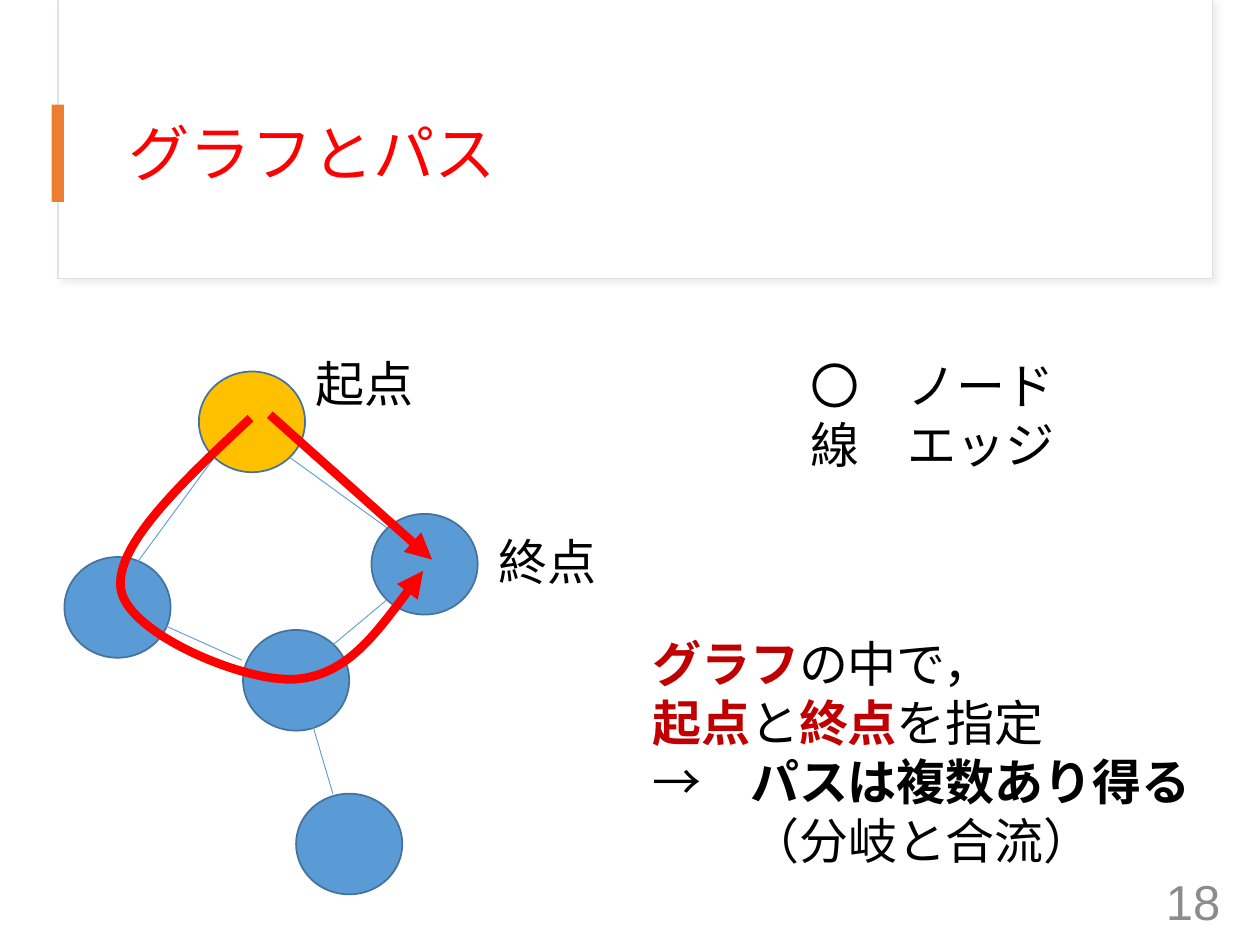
from dataclasses import dataclass
from typing import NamedTuple

from lxml.etree import SubElement
from pptx import Presentation
from pptx.dml.color import RGBColor
from pptx.enum.shapes import MSO_CONNECTOR, MSO_SHAPE
from pptx.enum.text import MSO_ANCHOR, PP_ALIGN
from pptx.oxml import parse_xml
from pptx.oxml.ns import nsdecls, qn
from pptx.util import Cm, Pt


@dataclass(frozen=True)
class Theme:
    latin: str = "Arial"
    kanji: str = "Noto Sans CJK JP"
    white: str = "FFFFFF"
    black: str = "000000"
    red: str = "FF0000"
    key: str = "C00000"
    gray: str = "8C8C8C"
    border: str = "E1E1E1"
    shade: str = "D9D9D9"
    accent: str = "ED7D31"
    start: str = "FFC000"
    node: str = "5B9BD5"
    rim: str = "43739E"
    head: float = 35
    body: float = 28


class Box(NamedTuple):
    x: float
    y: float
    w: float
    h: float

    def cm(self) -> list:
        return [Cm(v) for v in self]


class Edge(NamedTuple):
    x1: float
    y1: float
    x2: float
    y2: float


class Node(NamedTuple):
    x: float
    y: float
    color: str


class Span(NamedTuple):
    text: str
    color: str
    bold: bool = False


T = Theme()
NODE_W, NODE_H = 2.14, 2.03

NODES = [
    Node(4.01, 7.49, T.start),
    Node(1.3, 11.23, T.node),
    Node(7.49, 10.36, T.node),
    Node(4.9, 12.7, T.node),
    Node(5.97, 16, T.node),
]
EDGES = [
    Edge(4.32, 9.22, 2.72, 11.4),
    Edge(5.84, 9.22, 7.8, 10.64),
    Edge(4.88, 13.31, 3.12, 12.52),
    Edge(7.8, 12.09, 6.71, 13),
    Edge(6.71, 16, 6.3, 14.61),
]
# Start point, then three points for each Bézier piece
CURVE = [
    (5.05, 8.43),
    (3.66, 9.73), (2.29, 11.02), (2.44, 11.89),
    (2.59, 12.78), (4.95, 13.77), (5.97, 13.69),
    (6.99, 13.61), (7.75, 12.55), (8.53, 11.51),
]
DIRECT = Edge(5.44, 8.36, 8.71, 11.28)

LABELS = [
    (Box(6.12, 7.01, 2.51, 1.45), ["起点"]),
    (Box(9.8, 10.59, 2.51, 1.45), ["終点"]),
    (Box(16.08, 7.04, 5.51, 2.64), ["〇　ノード", "線　エッジ"]),
]
NOTE = [
    [Span("グラフ", T.key, True), Span("の中で，", T.black)],
    [Span("起点", T.key, True), Span("と", T.black),
     Span("終点", T.key, True), Span("を指定", T.black)],
    [Span("→　", T.black), Span("パスは複数あり得る", T.black, True)],
    [Span("（分岐と合流）", T.black)],
]


def style(run, size: float, color: str, font: str, bold: bool = False) -> None:
    run.font.size, run.font.bold = Pt(size), bold
    run.font.color.rgb = RGBColor.from_string(color)
    run.font.name = font
    SubElement(run.font._element, qn("a:ea"), typeface=T.kanji)


def stroke(line, color: str, width: float, arrow: bool = False) -> None:
    line.color.rgb = RGBColor.from_string(color)
    line.width = Pt(width)
    if arrow:
        SubElement(line._get_or_add_ln(), qn("a:tailEnd"), type="triangle")


def add_form(slide, kind: MSO_SHAPE, box: Box, fill: str,
             rim: str = "", width: float = 1):
    shape = slide.shapes.add_shape(kind, *box.cm())
    shape.shadow.inherit = False
    shape.fill.solid()
    shape.fill.fore_color.rgb = RGBColor.from_string(fill)
    if rim:
        stroke(shape.line, rim, width)
    else:
        shape.line.fill.background()
    return shape


def add_line(slide, edge: Edge, color: str, width: float,
             arrow: bool = False) -> None:
    line = slide.shapes.add_connector(MSO_CONNECTOR.STRAIGHT,
                                      *[Cm(v) for v in edge])
    stroke(line.line, color, width, arrow)
    SubElement(line._element.spPr, qn("a:effectLst"))


def add_curve(slide, points: list, color: str, width: float) -> None:
    first, *rest = [(Cm(x), Cm(y)) for x, y in points]
    form = slide.shapes.build_freeform(*first)
    form.add_line_segments(rest, close=False)
    shape = form.convert_to_shape()
    shape.shadow.inherit = False
    shape.fill.background()
    stroke(shape.line, color, width, arrow=True)
    # Join each three straight steps into one cubic piece
    track = shape._element.find(".//" + qn("a:path"))
    steps = track.findall(qn("a:lnTo"))
    for i in range(0, len(steps), 3):
        cubic = SubElement(track, qn("a:cubicBezTo"))
        for step in steps[i:i + 3]:
            cubic.append(step[0])
            track.remove(step)


def add_text(slide, box: Box, rows: list, font: str = T.kanji):
    frame = slide.shapes.add_textbox(*box.cm()).text_frame
    frame.word_wrap = True
    for i, row in enumerate(rows):
        para = frame.add_paragraph() if i else frame.paragraphs[0]
        for span in row:
            run = para.add_run()
            run.text = span.text
            style(run, T.body, span.color, font, span.bold)
    return frame


def add_head(slide) -> None:
    # Title card with its soft shadow
    card = add_form(slide, MSO_SHAPE.RECTANGLE, Box(1.17, 0, 23.27, 5.61),
                    T.white, T.border, 0.75)
    card._element.spPr.find(qn("a:effectLst")).append(parse_xml(
        f'<a:outerShdw {nsdecls("a")} blurRad="{Pt(4)}" dist="{Pt(3)}" '
        f'dir="2700000"><a:srgbClr val="{T.shade}"><a:alpha val="50000"/>'
        '</a:srgbClr></a:outerShdw>'))
    add_form(slide, MSO_SHAPE.RECTANGLE, Box(1.19, 0, 23.24, 5.59), T.white)

    # Title, brought in front of the card
    title = slide.shapes.title
    slide.shapes._spTree.append(title._element)
    title.left, title.top, title.width, title.height = Box(
        2.34, 1.52, 21.18, 3.28).cm()
    frame = title.text_frame
    frame.text = "グラフとパス"
    frame.vertical_anchor = MSO_ANCHOR.MIDDLE
    para = frame.paragraphs[0]
    para.alignment, para.line_spacing = PP_ALIGN.LEFT, 0.9
    style(para.runs[0], T.head, T.red, T.latin)
    add_form(slide, MSO_SHAPE.RECTANGLE, Box(1.04, 2.11, 0.25, 1.96), T.accent)


def main() -> None:
    deck = Presentation()
    deck.slide_width, deck.slide_height = Cm(25.4), Cm(19.05)
    slide = deck.slides.add_slide(deck.slide_layouts[5])
    add_head(slide)

    # Page number
    page = add_text(slide, Box(19.13, 17.65, 5.72, 1.02),
                    [[Span("18", T.gray)]], T.latin)
    page.vertical_anchor = MSO_ANCHOR.MIDDLE
    page.paragraphs[0].alignment = PP_ALIGN.RIGHT

    # Graph
    for node in NODES:
        add_form(slide, MSO_SHAPE.OVAL, Box(node.x, node.y, NODE_W, NODE_H),
                 node.color, T.rim)
    for edge in EDGES:
        add_line(slide, edge, T.node, 0.5)

    # Labels, legend and note
    for box, rows in LABELS:
        add_text(slide, box, [[Span(row, T.black)] for row in rows])
    note = add_text(slide, Box(12.9, 12.65, 11.48, 5.05), NOTE)
    last = note.paragraphs[-1]._p.get_or_add_pPr()
    last.set("marL", str(Pt(2 * T.body)))

    # Two routes from start to goal
    add_curve(slide, CURVE, T.red, 5)
    add_line(slide, DIRECT, T.red, 5, arrow=True)
    deck.save("out.pptx")


if __name__ == "__main__":
    main()
